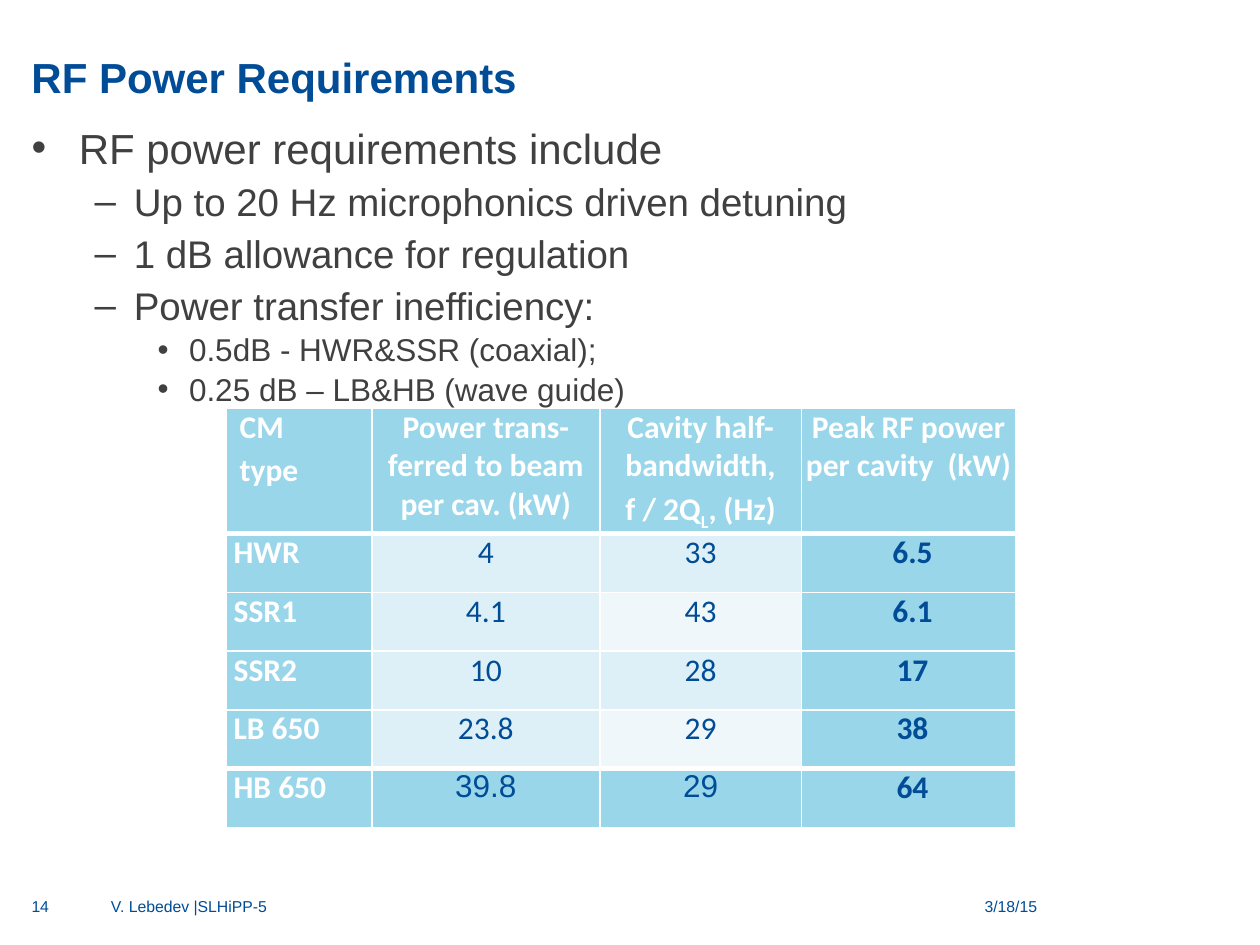
from dataclasses import dataclass
from lxml.etree import SubElement
from pptx import Presentation
from pptx.dml.color import RGBColor as RGB
from pptx.enum.text import MSO_ANCHOR as Anchor, PP_ALIGN as Align
from pptx.oxml.ns import qn
from pptx.util import Pt


@dataclass(frozen=True)
class Theme:
    blue: str = "004C97"
    gray: str = "404040"
    white: str = "FFFFFF"
    sky: str = "99D6EA"
    pale: str = "DEF0F7"
    mist: str = "EFF7FB"
    sans: str = "Arial"
    cell: str = "Calibri"
    head: int = 24
    levels: tuple = (24, 22, 18)
    grid: int = 18
    foot: int = 9


T = Theme()

# Per outline level: left margin, hanging indent, space before, bullet
LEVELS = [(27, -27, 0, "•"), (58.5, -22.5, 2, "–"), (90, -18, 0, "•")]

POINTS = [
    (0, "RF power requirements include"),
    (1, "Up to 20 Hz microphonics driven detuning"),
    (1, "1 dB allowance for regulation"),
    (1, "Power transfer inefficiency:"),
    (2, "0.5dB - HWR&SSR (coaxial);"),
    (2, "0.25 dB – LB&HB (wave guide)"),
]

# Header cells hold paragraphs, which hold runs
HEADS = [
    [["CM"], ["type"]],
    [["Power trans-ferred to beam per cav. (kW)"]],
    [["Cavity half-bandwidth,"], ["f / 2Q", "L", ", (Hz)"]],
    [["Peak RF power per cavity  (kW)"]],
]
ROWS = [
    ("HWR", "4", "33", "6.5"),
    ("SSR1", "4.1", "43", "6.1"),
    ("SSR2", "10", "28", "17"),
    ("LB 650", "23.8", "29", "38"),
    ("HB 650", "39.8", "29", "64"),
]
WIDTHS = (83.5, 130.3, 115.2, 122.4)
HEAD_H, ROW_H = 71.6, 33.6


def add_run(para, text, size, color, bold=False, font=T.sans):
    run = para.add_run()
    run.text = text
    run.font.name, run.font.size, run.font.bold = font, Pt(size), bold
    run.font.color.rgb = RGB.from_string(color)
    return run


def add_box(slide, left, top, width, height):
    box = slide.shapes.add_textbox(Pt(left), Pt(top), Pt(width), Pt(height))
    frame = box.text_frame
    frame.word_wrap = True
    frame.margin_left = frame.margin_right = 0
    frame.margin_top = frame.margin_bottom = 0
    return frame


def next_para(frame, index):
    return frame.paragraphs[0] if index == 0 else frame.add_paragraph()


def indent(para, left, first=0):
    props = para._p.get_or_add_pPr()
    props.set("marL", str(Pt(left)))
    props.set("indent", str(Pt(first)))
    return props


def add_points(slide):
    frame = add_box(slide, 18, 68.4, 702, 120)
    for i, (level, text) in enumerate(POINTS):
        left, first, before, mark = LEVELS[level]
        para = next_para(frame, i)
        para.level = level
        props = indent(para, left, first)
        SubElement(props, qn("a:buFont"), typeface=T.sans)
        SubElement(props, qn("a:buChar"), char=mark)
        para.line_spacing = 1.05
        para.space_before = Pt(before)
        add_run(para, text, T.levels[level], T.gray)


def style_cell(cell, fill, top=1, bottom=1):
    cell.margin_left = cell.margin_right = 0
    cell.margin_top = cell.margin_bottom = 0
    props = cell._tc.get_or_add_tcPr()
    # Borders come before the fill in the cell properties
    for side, width in (("L", 1), ("R", 1), ("T", top), ("B", bottom)):
        line = SubElement(props, qn(f"a:ln{side}"), w=str(Pt(width)))
        solid = SubElement(line, qn("a:solidFill"))
        SubElement(solid, qn("a:srgbClr"), val=T.white)
    cell.fill.solid()
    cell.fill.fore_color.rgb = RGB.from_string(fill)


def fill_head(cell, col, paras):
    style_cell(cell, T.sky, bottom=3)
    for i, runs in enumerate(paras):
        para = next_para(cell.text_frame, i)
        para.alignment = Align.CENTER if col else Align.JUSTIFY
        para.space_after = Pt(3)
        if col == 0:
            indent(para, 8)
        for text in runs:
            run = add_run(para, text, T.grid, T.white, True, T.cell)
            if text == "L":
                run._r.get_or_add_rPr().set("baseline", "-25000")


def fill_cell(cell, row, col, text):
    last = len(ROWS)
    edge = col in (0, 3)
    band = T.mist if col == 2 and row % 2 == 0 else T.pale
    style_cell(cell, T.sky if edge or row == last else band,
               top=3 if row in (1, last) else 1,
               bottom=3 if row == last - 1 else 1)
    para = cell.text_frame.paragraphs[0]
    para.alignment = Align.CENTER if col else Align.JUSTIFY
    para.space_after = Pt(3)
    if edge:
        indent(para, 4.5)
    font = T.sans if row == last and not edge else T.cell
    add_run(para, text, T.grid, T.blue if col else T.white, edge, font)


def add_grid(slide):
    height = HEAD_H + ROW_H * len(ROWS)
    grid = slide.shapes.add_table(len(ROWS) + 1, len(WIDTHS), Pt(129), Pt(233.3),
                                  Pt(sum(WIDTHS)), Pt(height)).table
    grid.horz_banding = False
    for col, width in enumerate(WIDTHS):
        grid.columns[col].width = Pt(width)
        fill_head(grid.cell(0, col), col, HEADS[col])
    grid.rows[0].height = Pt(HEAD_H)
    for row, texts in enumerate(ROWS, 1):
        grid.rows[row].height = Pt(ROW_H)
        for col, text in enumerate(texts):
            fill_cell(grid.cell(row, col), row, col, text)


def add_foot(slide, left, width, text, align=Align.LEFT):
    para = add_box(slide, left, 512.6, width, 18.7).paragraphs[0]
    para.alignment = align
    add_run(para, text, T.foot, T.blue)


def main():
    deck = Presentation()
    deck.slide_width, deck.slide_height = Pt(720), Pt(540)
    slide = deck.slides.add_slide(deck.slide_layouts[6])

    # Title
    title = add_box(slide, 18, 8, 684, 50.4)
    title.vertical_anchor = Anchor.BOTTOM
    add_run(title.paragraphs[0], "RF Power Requirements", T.head, T.blue, True)

    # Content
    add_points(slide)
    add_grid(slide)

    # Footer
    add_foot(slide, 507.6, 85, "3/18/15", Align.RIGHT)
    add_foot(slide, 63.4, 423.4, "V. Lebedev |SLHiPP-5")
    add_foot(slide, 18, 35.3, "14")

    deck.save("out.pptx")


if __name__ == "__main__":
    main()
